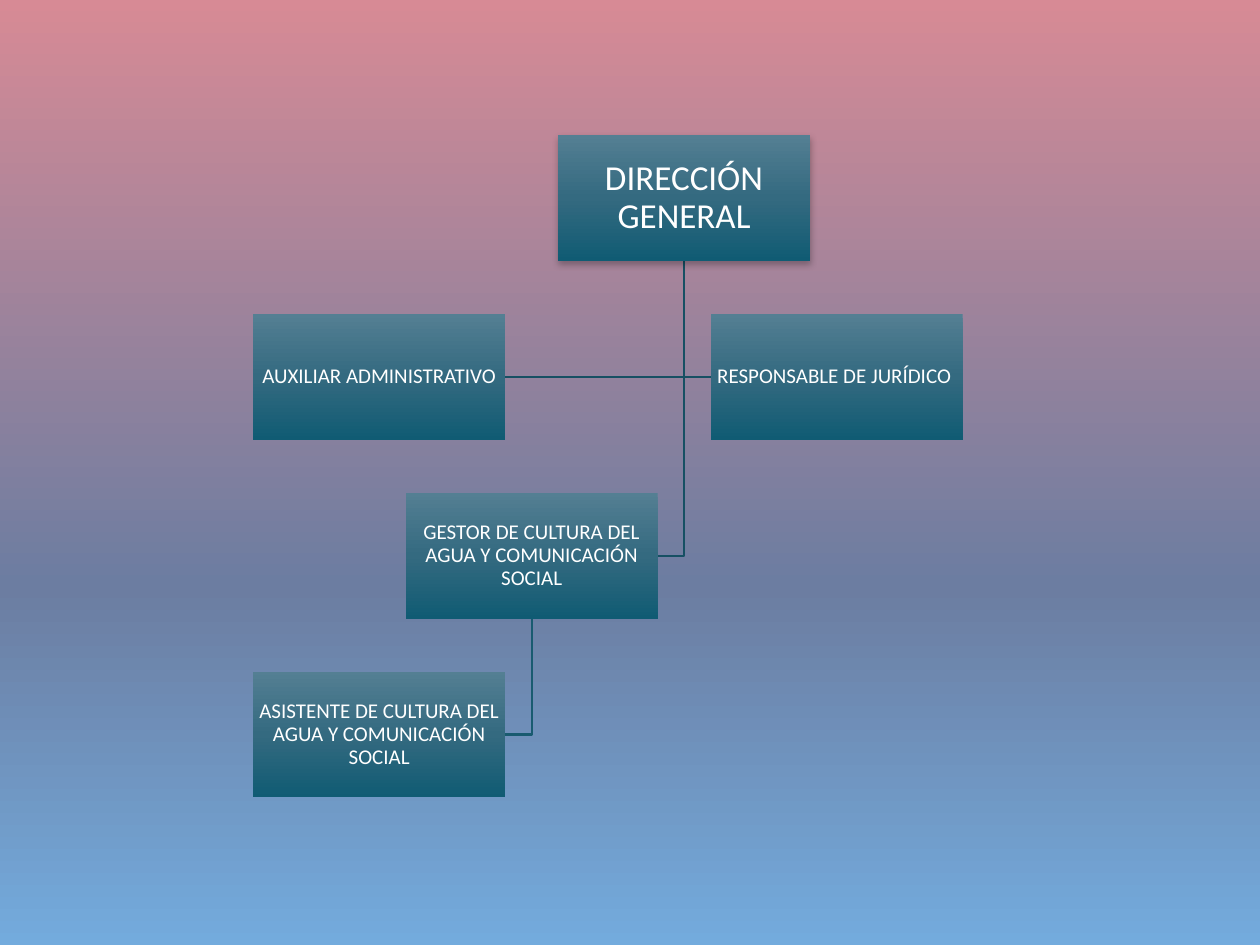
"""Builds the organisation chart of a water agency on one slide."""
from lxml import etree
from pptx import Presentation
from pptx.dml.color import RGBColor
from pptx.enum.shapes import MSO_SHAPE
from pptx.enum.text import MSO_ANCHOR, PP_ALIGN
from pptx.oxml.ns import qn
from pptx.util import Inches, Pt

RECTANGLE = MSO_SHAPE.RECTANGLE
MIDDLE = MSO_ANCHOR.MIDDLE
CENTER = PP_ALIGN.CENTER

COLORS = {
    "sky_top": "D78A95", "sky_middle": "6C7DA1", "sky_bottom": "73ABDD",
    "box_top": "547F93", "box_middle": "346A80", "box_bottom": "105B73",
    "line": "165063", "lower_line": "195B70", "text": "FFFFFF", "shadow": "000000",
}
SKY = [(0, "sky_top"), (62, "sky_middle"), (100, "sky_bottom")]
BOX_FILL = [(0, "box_top"), (50, "box_middle"), (100, "box_bottom")]
FONT = "Calibri"
LEFT, TOP = 2.01, 1.07
COLUMN_STEP, ROW_STEP = 1.21, 1.42
BOX_WIDTH, BOX_HEIGHT = 2, 1

DIRECTOR, ASSISTANT, LEGAL, MANAGER, CULTURE = (2, 0), (0, 1), (3, 1), (1, 2), (0, 3)
POSTS = {
    DIRECTOR: "DIRECCIÓN GENERAL",
    ASSISTANT: "AUXILIAR ADMINISTRATIVO",
    LEGAL: "RESPONSABLE DE JURÍDICO ",
    MANAGER: "GESTOR DE CULTURA DEL AGUA Y COMUNICACIÓN SOCIAL",
    CULTURE: "ASISTENTE DE CULTURA DEL AGUA Y COMUNICACIÓN SOCIAL",
}
LINKS = [
    (MANAGER, CULTURE, "lower_line"),
    (DIRECTOR, MANAGER, "line"),
    (DIRECTOR, LEGAL, "line"),
    (DIRECTOR, ASSISTANT, "line"),
]


def add_color(parent, color):
    """Append an RGB colour element and return it."""
    return etree.SubElement(parent, qn("a:srgbClr"), val=COLORS[color])


def set_gradient(fill, element, stops):
    """Give a fill a top-to-bottom gradient with the listed stops."""
    fill.gradient()
    fill.gradient_angle = 270
    stop_list = element.find(".//" + qn("a:gsLst"))
    for old_stop in list(stop_list):
        stop_list.remove(old_stop)
    for position, color in stops:
        stop = etree.SubElement(stop_list, qn("a:gs"), pos=str(position * 1000))
        add_color(stop, color)


def add_shadow(shape):
    """Give a shape a soft shadow falling straight down."""
    effects = shape._element.spPr.find(qn("a:effectLst"))
    shadow = etree.SubElement(
        effects, qn("a:outerShdw"), blurRad=str(Pt(4)), dist=str(Pt(2)),
        dir="5400000", rotWithShape="0")
    etree.SubElement(add_color(shadow, "shadow"), qn("a:alpha"), val="28000")


def corner(cell):
    """Return the left and top of a grid cell in inches."""
    column, row = cell
    return LEFT + column * COLUMN_STEP, TOP + row * ROW_STEP


def write_text(shape, text, size=12, color="text"):
    """Write centred text into a shape."""
    frame = shape.text_frame
    frame.word_wrap = True
    frame.vertical_anchor = MIDDLE
    frame.margin_left = frame.margin_right = Inches(0.01)
    frame.margin_top = frame.margin_bottom = Inches(0.01)
    paragraph = frame.paragraphs[0]
    paragraph.text = text
    paragraph.alignment = CENTER
    paragraph.line_spacing = 0.9
    paragraph.font.name = FONT
    paragraph.font.size = Pt(size)
    paragraph.font.color.rgb = RGBColor.from_string(COLORS[color])


def add_box(slide, cell, text, size=12):
    """Add the box of one post and return it."""
    left, top = corner(cell)
    box = slide.shapes.add_shape(
        RECTANGLE, Inches(left), Inches(top), Inches(BOX_WIDTH), Inches(BOX_HEIGHT))
    box.shadow.inherit = False
    box.line.fill.background()
    set_gradient(box.fill, box._element.spPr, BOX_FILL)
    write_text(box, text, size=size)
    return box


def add_link(slide, parent, child, color):
    """Draw a line down from a parent box and across to the child's near side."""
    parent_left, parent_top = corner(parent)
    child_left, child_top = corner(child)
    start_x = Inches(parent_left + BOX_WIDTH / 2)
    end_x = Inches(child_left if child[0] > parent[0] else child_left + BOX_WIDTH)
    end_y = Inches(child_top + BOX_HEIGHT / 2)
    builder = slide.shapes.build_freeform(start_x, Inches(parent_top + BOX_HEIGHT))
    builder.add_line_segments([(start_x, end_y), (end_x, end_y)], close=False)
    link = builder.convert_to_shape()
    link.shadow.inherit = False
    link.fill.background()
    link.line.color.rgb = RGBColor.from_string(COLORS[color])
    link.line.width = Pt(1.25)


def main():
    """Build and save the slide."""
    presentation = Presentation()
    presentation.slide_width, presentation.slide_height = Inches(10), Inches(7.5)
    slide = presentation.slides.add_slide(presentation.slide_layouts[6])
    set_gradient(slide.background.fill, slide._element, SKY)
    for parent, child, color in LINKS:
        add_link(slide, parent, child, color)
    for cell, text in POSTS.items():
        box = add_box(slide, cell, text, size=20 if cell == DIRECTOR else 12)
        if cell == DIRECTOR:
            add_shadow(box)
    presentation.save("out.pptx")


if __name__ == "__main__":
    main()
